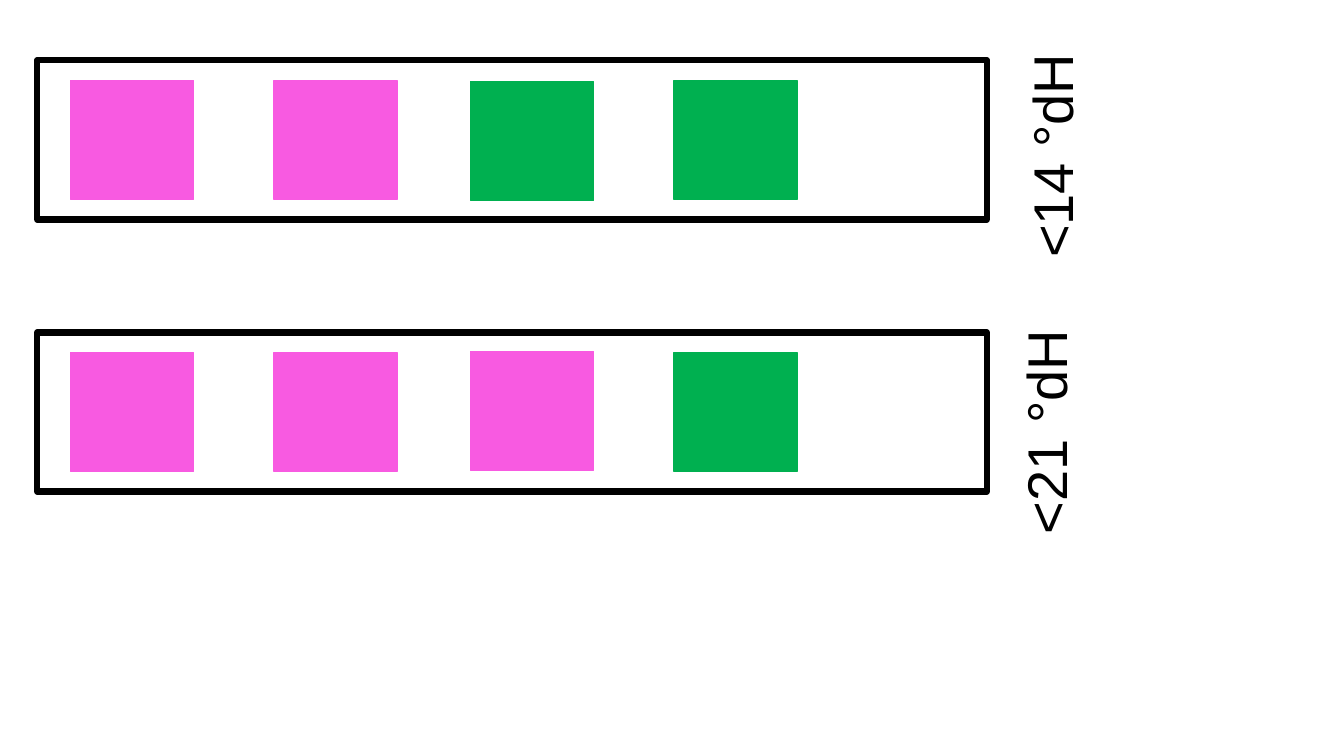
from pptx import Presentation
from pptx.dml.color import RGBColor
from pptx.enum.shapes import MSO_SHAPE as Shape
from pptx.enum.text import MSO_AUTO_SIZE as Fit
from pptx.util import Cm, Pt

# Content: label, label left and width, pad colours, nudge of the third pad
PINK, GREEN, BLACK = "F85AE1", "00B050", "000000"
STRIPS = [
    ("<14 °dH", 23.11, 6.76, (PINK, PINK, GREEN, GREEN), 0.03),
    ("<21 °dH", 22.86, 6.96, (PINK, PINK, PINK, GREEN), -0.03),
]

# Layout in cm
LEFT, TOP, WIDE, HIGH = 0.94, 1.52, 23.93, 4.01
STEP = 6.86
PADS = (1.78, 6.91, 11.86, 16.99)
PAD_W, PAD_H = 3.1, 3.0
TEXT_H = 1.96


def paint(tone):
    return RGBColor.from_string(tone)


def box(x, y, w, h, line, weight, fill=None):
    rect = slide.shapes.add_shape(Shape.RECTANGLE, Cm(x), Cm(y), Cm(w), Cm(h))
    rect.shadow.inherit = False
    if fill:
        rect.fill.solid()
        rect.fill.fore_color.rgb = paint(fill)
    else:
        rect.fill.background()
    rect.line.color.rgb = paint(line)
    rect.line.width = Pt(weight)


def label(text, x, y, w):
    note = slide.shapes.add_textbox(Cm(x), Cm(y), Cm(w), Cm(TEXT_H))
    note.rotation = 270
    frame = note.text_frame
    frame.text = text
    frame.word_wrap = True
    frame.auto_size = Fit.SHAPE_TO_FIT_TEXT
    font = frame.paragraphs[0].runs[0].font
    font.name, font.size = "Arial", Pt(40)
    font.color.rgb = paint(BLACK)


deck = Presentation()
deck.slide_width, deck.slide_height = Cm(33.87), Cm(19.05)
slide = deck.slides.add_slide(deck.slide_layouts[6])

# Test strips with their pads and labels
for row, (text, text_x, text_w, tones, nudge) in enumerate(STRIPS):
    top = TOP + row * STEP
    box(LEFT, top, WIDE, HIGH, BLACK, 4.5)
    for col, (x, tone) in enumerate(zip(PADS, tones)):
        shift = nudge if col == 2 else 0
        box(x, top + (HIGH - PAD_H) / 2 + shift, PAD_W, PAD_H, tone, 1, tone)
    label(text, text_x, top + 0.87, text_w)

deck.save("out.pptx")
